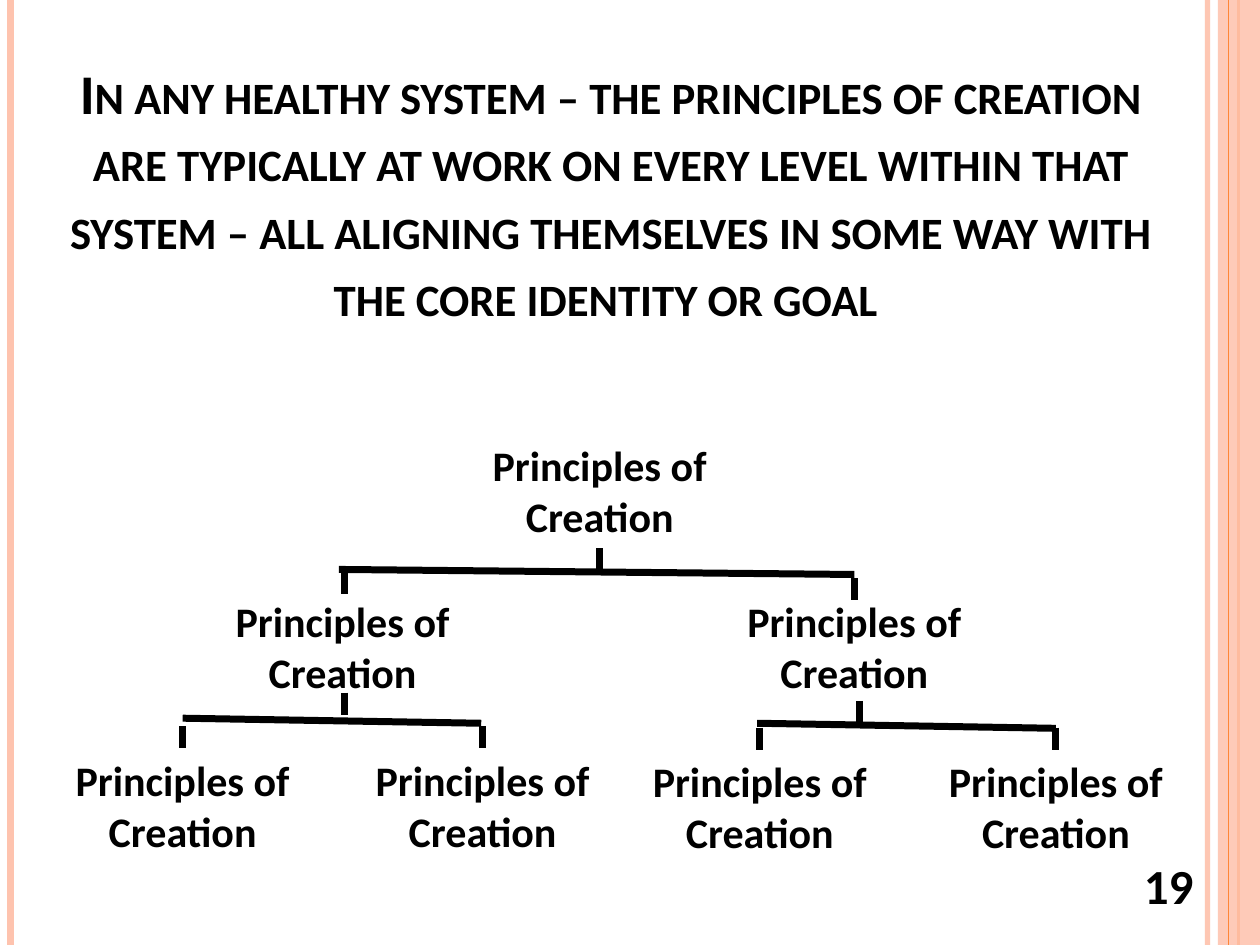
from dataclasses import dataclass

from lxml.etree import SubElement
from pptx import Presentation
from pptx.dml.color import RGBColor
from pptx.enum.shapes import MSO_CONNECTOR as Connector, MSO_SHAPE as Shape
from pptx.enum.text import MSO_ANCHOR as Anchor, MSO_AUTO_SIZE as AutoSize, PP_ALIGN as Align
from pptx.oxml.ns import qn
from pptx.util import Pt


@dataclass(frozen=True)
class Theme:
    font: str = "Calibri"
    ink: str = "000000"
    peach: str = "FEC3AE"
    orange: str = "FE8637"
    title_size: float = 32
    node_size: float = 24
    number_size: float = 28
    tree_line: float = 4


THEME = Theme()
SLIDE_W, SLIDE_H = 720, 540
NODE_W, NODE_H = 158.4, 65.5
TICK = 12.6  # length of every short vertical line in the tree
NODE_TEXT = "Principles of Creation"
TITLE = ("In any healthy system – the principles of creation are typically at work "
         "on every level within that system – all aligning themselves in some way "
         "with the core identity or goal ")

# Border rails: x, width, colour, opacity in percent
LEFT_RAILS = [(690, 3, THEME.peach, 93), (6, 4.5, THEME.peach, 100),
              (707.8, 1.5, THEME.orange, 100)]
INNER_RAIL = (702, 0.75, THEME.orange, 100)
BAND = (696, 0, 24, SLIDE_H)

# Tree: left and top of each node
ROOT = (263.5, 247.7)
BRANCHES = [(116.6, 337), (409, 337)]
LEAVES = [(25.2, 427.7), (196.6, 427.7), (355, 428.4), (524.2, 428.4)]


def apply_format(target, values):
    for name, value in values.items():
        setattr(target, name, value)


def set_opacity(fill, percent):
    if percent < 100:
        colour = fill._xPr.find(qn("a:solidFill"))[0]
        SubElement(colour, qn("a:alpha")).set("val", str(percent * 1000))


def write_text(shape, text, size, **frame_format):
    frame = shape.text_frame
    apply_format(frame, {"word_wrap": True, "auto_size": AutoSize.NONE, **frame_format})
    paragraph = frame.paragraphs[0]
    paragraph.alignment = Align.CENTER
    run = paragraph.add_run()
    run.text = text
    apply_format(run.font, {"name": THEME.font, "size": Pt(size), "bold": True})
    run.font.color.rgb = RGBColor.from_string(THEME.ink)
    return run


def add_label(slide, text, size, box, **frame_format):
    label = slide.shapes.add_textbox(*map(Pt, box))
    write_text(label, text, size, **frame_format)
    return label


def add_node(slide, corner):
    return add_label(slide, NODE_TEXT, THEME.node_size, (*corner, NODE_W, NODE_H),
                     auto_size=AutoSize.SHAPE_TO_FIT_TEXT)


def add_line(slide, start, end, width=THEME.tree_line, colour=THEME.ink, opacity=100):
    line = slide.shapes.add_connector(Connector.STRAIGHT, *map(Pt, (*start, *end)))
    line.line.width = Pt(width)
    line.line.color.rgb = RGBColor.from_string(colour)
    set_opacity(line.line.fill, opacity)
    SubElement(line._element.spPr, qn("a:effectLst"))
    return line


def add_tick(slide, x, top):
    return add_line(slide, (x, top), (x, top + TICK))


def add_rail(slide, x, width, colour, opacity):
    add_line(slide, (x, 0), (x, SLIDE_H), width, colour, opacity)


def add_border(slide):
    for rail in LEFT_RAILS:
        add_rail(slide, *rail)
    band = slide.shapes.add_shape(Shape.RECTANGLE, *map(Pt, BAND))
    band.shadow.inherit = False
    band.fill.solid()
    band.fill.fore_color.rgb = RGBColor.from_string(THEME.peach)
    set_opacity(band.fill, 87)
    band.line.fill.background()
    add_rail(slide, *INNER_RAIL)


def add_title(slide):
    title = slide.shapes.title
    apply_format(title, {"left": Pt(20.2), "top": Pt(20.9),
                         "width": Pt(657.4), "height": Pt(169.9)})
    run = write_text(title, TITLE, THEME.title_size, vertical_anchor=Anchor.BOTTOM)
    run.font._element.set("cap", "small")


def add_tree(slide):
    root = add_node(slide, ROOT)
    for corner in BRANCHES:
        add_node(slide, corner)
    leaves = [add_node(slide, corner) for corner in LEAVES]

    # Horizontal beams, each slightly sloped
    add_line(slide, (193.7, 325.4), (488.2, 328.3))
    for left, top in ((104.4, 410.4), (432.7, 413.3)):
        add_line(slide, (left, top), (left + 170.6, top + 2.9))

    # Stem below the root, then the ticks around the branches
    root_x = ROOT[0] + NODE_W / 2
    add_tick(slide, root_x, 312.8).begin_connect(root, 2)
    for x, top in ((196.6, 326.7), (488.2, 330.4), (196.6, 395.8), (491, 400.5)):
        add_tick(slide, x, top)

    # Ticks down to the leaves
    for (left, top), leaf in zip(LEAVES, leaves):
        add_tick(slide, left + NODE_W / 2, top - TICK).end_connect(leaf, 0)


def main():
    deck = Presentation()
    apply_format(deck, {"slide_width": Pt(SLIDE_W), "slide_height": Pt(SLIDE_H)})
    slide = deck.slides.add_slide(deck.slide_layouts[5])
    add_border(slide)
    add_title(slide)
    add_tree(slide)
    # Page number
    add_label(slide, "19", THEME.number_size, (643.7, 485.3, 48.2, 41),
              vertical_anchor=Anchor.MIDDLE)
    deck.save("out.pptx")


if __name__ == "__main__":
    main()
